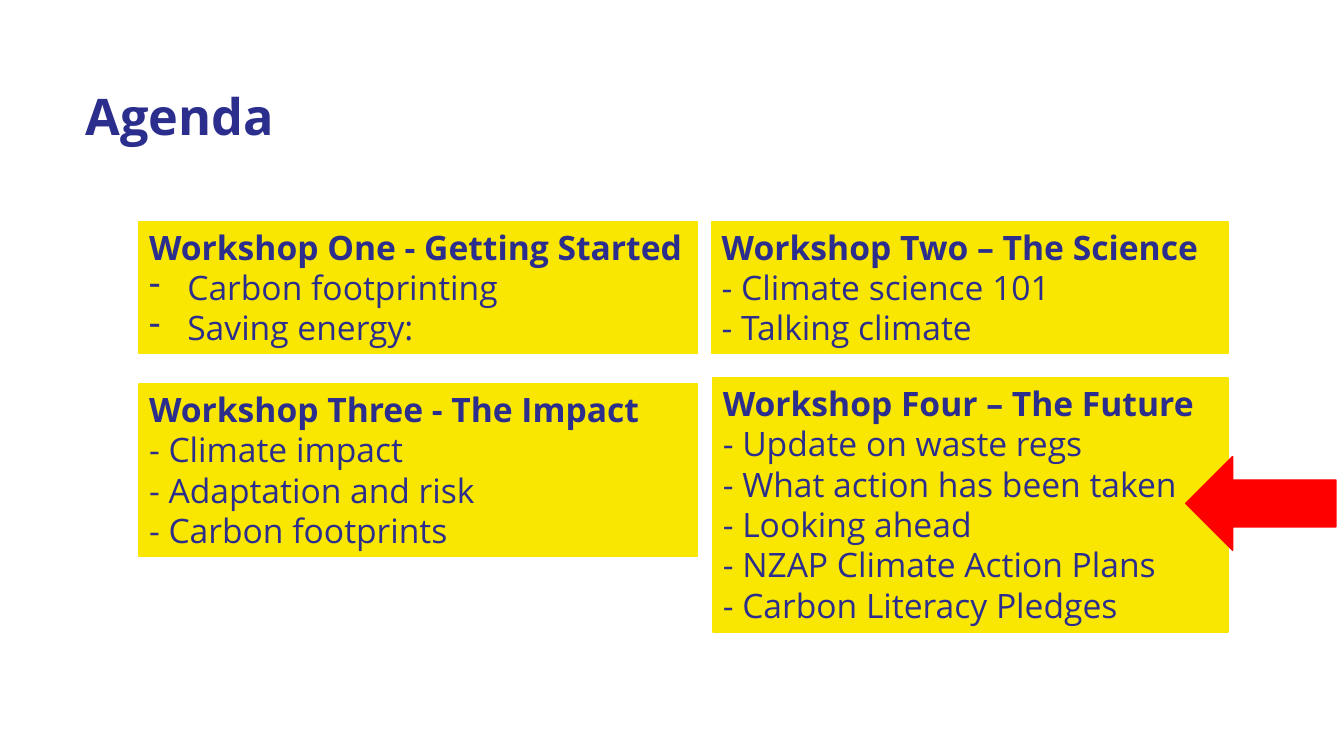
from lxml import etree
from pptx import Presentation
from pptx.dml.color import RGBColor
from pptx.enum.shapes import MSO_SHAPE
from pptx.enum.text import MSO_ANCHOR, MSO_AUTO_SIZE, PP_ALIGN
from pptx.oxml.ns import qn
from pptx.util import Inches, Pt

RECTANGLE = MSO_SHAPE.RECTANGLE
LEFT_ARROW = MSO_SHAPE.LEFT_ARROW
TOP = MSO_ANCHOR.TOP
LEFT = PP_ALIGN.LEFT
GROW = MSO_AUTO_SIZE.SHAPE_TO_FIT_TEXT
NAVY, YELLOW, RED = "2C2E8D", "F9E701", "FF0000"


def style_font(font, size, bold):
    font.name = "Open Sans"
    font.size = Pt(size)
    font.bold = bold
    font.color.rgb = RGBColor.from_string(NAVY)


def add_filled_shape(kind, box, color, line_width):
    shape = slide.shapes.add_shape(kind, *[Inches(value) for value in box])
    shape.shadow.inherit = False
    shape.fill.solid()
    shape.fill.fore_color.rgb = RGBColor.from_string(color)
    shape.line.color.rgb = RGBColor.from_string(color)
    shape.line.width = Pt(line_width)
    return shape


presentation = Presentation()
presentation.slide_width = Inches(13.33)
presentation.slide_height = Inches(7.5)
slide = presentation.slides.add_slide(presentation.slide_layouts[5])

title = slide.shapes.title
title.left, title.top = Inches(0.75), Inches(0.79)
title.width, title.height = Inches(10.36), Inches(1.11)
title.text_frame.text = "Agenda"
title.text_frame.vertical_anchor = TOP
title.text_frame.paragraphs[0].alignment = LEFT
style_font(title.text_frame.paragraphs[0].runs[0].font, 36, True)

workshops = [
    ((7.06, 2.2, 5.12, 1.31), 1, False, "Workshop Two – The Science",
     ["- Climate science 101", "- Talking climate"]),
    ((1.38, 3.81, 5.54, 1.71), 1, False, "Workshop Three - The Impact",
     ["- Climate impact", "- Adaptation and risk", "- Carbon footprints"]),
    ((7.07, 3.75, 5.11, 2.52), 1.5, False, "Workshop Four – The Future",
     ["- Update on waste regs", "- What action has been taken", "- Looking ahead",
      "- NZAP Climate Action Plans", "- Carbon Literacy Pledges"]),
    ((1.38, 2.2, 5.54, 1.31), 1, True, "Workshop One - Getting Started",
     ["Carbon footprinting", "Saving energy:"]),
]

for box, line_width, bulleted, heading, topics in workshops:
    shape = add_filled_shape(RECTANGLE, box, YELLOW, line_width)
    text_frame = shape.text_frame
    text_frame.word_wrap = True
    text_frame.auto_size = GROW
    text_frame.vertical_anchor = TOP
    text_frame.text = "\n".join([heading] + topics)
    for index, paragraph in enumerate(text_frame.paragraphs):
        paragraph.alignment = LEFT
        if bulleted and index > 0:
            properties = paragraph._p.get_or_add_pPr()
            properties.set("marL", str(Inches(0.38)))
            properties.set("indent", str(-Inches(0.38)))
            etree.SubElement(properties, qn("a:buChar")).set("char", "-")
        style_font(paragraph.runs[0].font, 24, index == 0)

add_filled_shape(LEFT_ARROW, (11.76, 4.53, 1.49, 0.93), RED, 1)

presentation.save("out.pptx")
